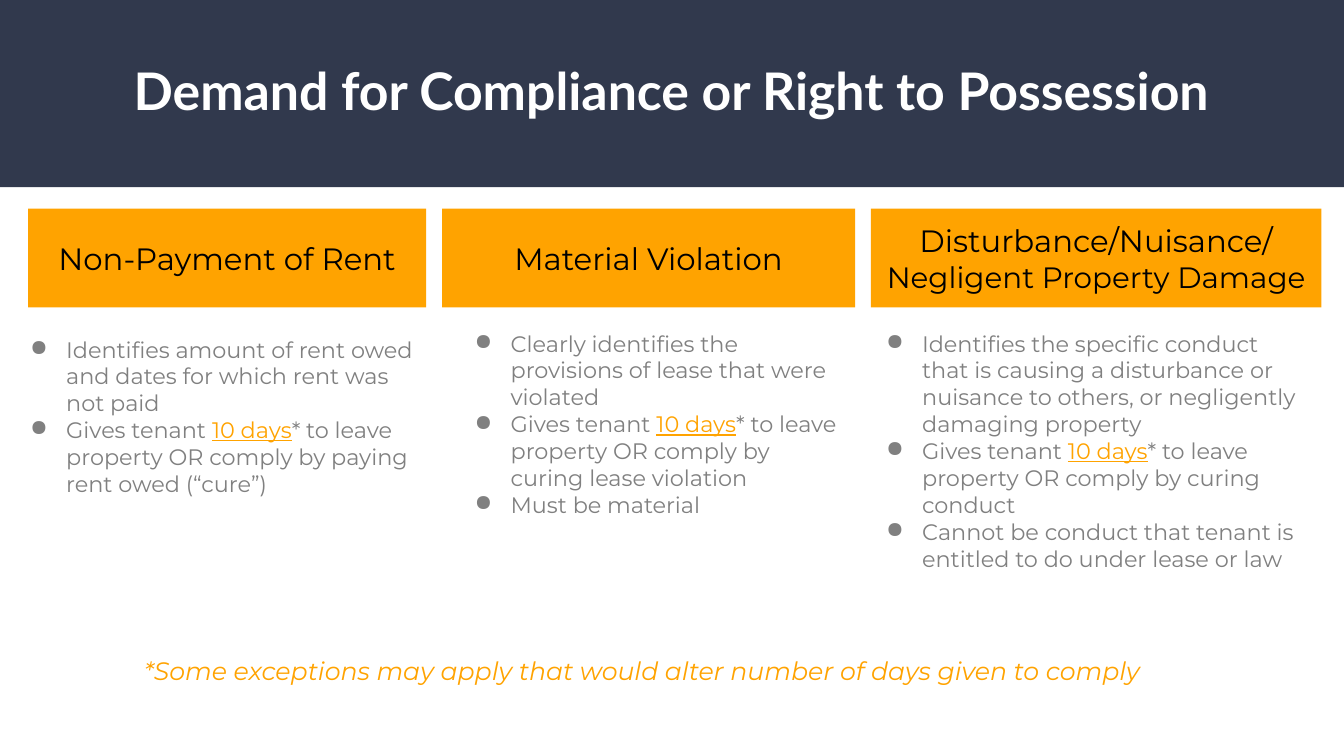
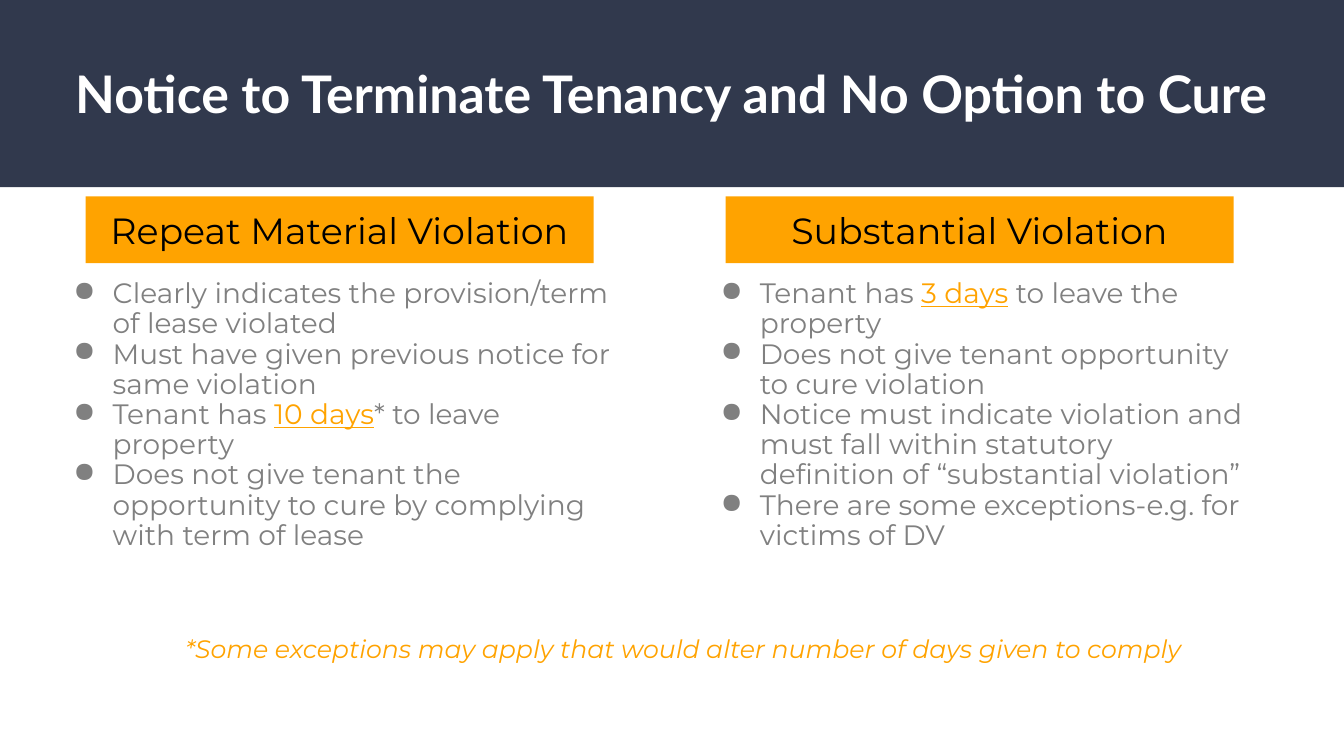
import collections

import lxml.etree
import pptx
import pptx.dml.color
import pptx.enum.shapes
import pptx.enum.text
import pptx.oxml.ns
import pptx.util

Cm = pptx.util.Cm
Align = pptx.enum.text.PP_ALIGN
Anchor = pptx.enum.text.MSO_ANCHOR
Box = collections.namedtuple("Box", "left top width height")
Column = collections.namedtuple("Column", "heading width shift drop body_width points")

NAVY, ORANGE, GREY, WHITE, BLACK = "31394D", "FFA300", "808080", "FFFFFF", "000000"
TITLE_FONT, TEXT_FONT = "Lato", "Montserrat"
PAGE_WIDTH, PAGE_HEIGHT, BAND_HEIGHT = 33.87, 19.05, 4.72
NOTE = "*Some exceptions may apply that would alter number of days given to comply"

DEMAND_COLUMNS = [
    Column([("Non-Payment of Rent", 22)], 10.03, -0.56, 3.07, 10.74, [
        "Identifies amount of rent owed and dates for which rent was not paid",
        "Gives tenant |10 days|* to leave property OR comply by paying rent owed (“cure”)",
    ]),
    Column([("Material Violation", 22)], 10.41, 0.21, 2.92, 10.03, [
        "Clearly identifies the provisions of lease that were violated",
        "Gives tenant |10 days|* to leave property OR comply by curing lease violation",
        "Must be material",
    ]),
    Column([("Disturbance/Nuisance/", 22), ("Negligent Property Damage", 21)],
           11.35, -0.23, 2.92, 11.35, [
        "Identifies the specific conduct that is causing a disturbance or nuisance "
        "to others, or negligently damaging property",
        "Gives tenant |10 days|* to leave property OR comply by curing conduct",
        "Cannot be conduct that tenant is entitled to do under lease or law",
    ]),
]

TERMINATE_COLUMNS = [
    Column([("Repeat Material Violation", 26)], 12.8, -0.84, 1.96, 14.48, [
        "Clearly indicates the provision/term of lease violated",
        "Must have given previous notice for same violation",
        "Tenant has |10 days|* to leave property",
        "Does not give tenant the opportunity to cure by complying with term of lease",
    ]),
    Column([("Substantial Violation", 26)], 12.8, -0.66, 1.96, 14.12, [
        "Tenant has |3 days| to leave the property",
        "Does not give tenant opportunity to cure violation",
        "Notice must indicate violation and must fall within statutory "
        "definition of “substantial violation”",
        "There are some exceptions-e.g. for victims of DV",
    ]),
]


def color(value):
    return pptx.dml.color.RGBColor.from_string(value)


def lengths(box):
    return [Cm(value) for value in box]


def set_frame(frame, anchor, vertical_inset):
    frame.word_wrap = True
    frame.auto_size = pptx.enum.text.MSO_AUTO_SIZE.NONE
    frame.vertical_anchor = anchor
    frame.margin_left = frame.margin_right = Cm(0.25)
    frame.margin_top = frame.margin_bottom = Cm(vertical_inset)


def add_bullet(para, indent):
    properties = para._p.get_or_add_pPr()
    properties.set("marL", str(Cm(1.27)))
    properties.set("indent", str(-Cm(indent)))
    qualified = pptx.oxml.ns.qn
    bullet_color = lxml.etree.SubElement(properties, qualified("a:buClr"))
    lxml.etree.SubElement(bullet_color, qualified("a:srgbClr"), val=GREY)
    lxml.etree.SubElement(properties, qualified("a:buChar"), char="●")


def write(frame, text, size, fill=GREY, font=TEXT_FONT, bold=False, italic=False,
          align=Align.LEFT, spacing=1.0, before=0, bullet_indent=None):
    first = frame.paragraphs[0]
    para = frame.add_paragraph() if first.runs else first
    para.alignment = align
    para.line_spacing = spacing
    para.space_before = pptx.util.Pt(before)
    if bullet_indent:
        add_bullet(para, bullet_indent)
    for position, part in enumerate(text.split("|")):
        marked = position % 2 == 1
        span = para.add_run()
        span.text = part
        span.font.name = font
        span.font.size = pptx.util.Pt(size)
        span.font.bold = bold
        span.font.italic = italic
        span.font.underline = marked
        span.font.color.rgb = color(ORANGE if marked else fill)


def add_panel(page, box, fill):
    panel = page.shapes.add_shape(
        pptx.enum.shapes.MSO_SHAPE.RECTANGLE, *lengths(box))
    panel.shadow.inherit = False
    panel.fill.solid()
    panel.fill.fore_color.rgb = color(fill)
    panel.line.fill.background()
    return panel


def add_text_box(page, box, vertical_inset):
    frame = page.shapes.add_textbox(*lengths(box)).text_frame
    set_frame(frame, Anchor.TOP, vertical_inset)
    return frame


def add_layout_band(page):
    band = add_panel(page, Box(0, 0, PAGE_WIDTH, BAND_HEIGHT), NAVY)
    page.slide_layout.shapes.element.insert(2, band.element)


def add_title(page, text, box):
    title = page.shapes.title
    title.left, title.top, title.width, title.height = lengths(box)
    set_frame(title.text_frame, Anchor.MIDDLE, 0.13)
    write(title.text_frame, text, size=37, fill=WHITE, font=TITLE_FONT, bold=True,
          align=Align.CENTER, spacing=0.9)


def add_column(page, box, column, body_format):
    heading = add_panel(page, box, ORANGE).text_frame
    set_frame(heading, Anchor.MIDDLE, 0.25)
    for text, size in column.heading:
        write(heading, text, size=size, fill=BLACK, align=Align.CENTER)
    body_box = Box(box.left + column.shift, box.top + column.drop,
                   column.body_width, 8.5)
    body = add_text_box(page, body_box, 0.13)
    for point in column.points:
        write(body, point, **body_format)


def add_columns(page, box, columns, gap, body_format):
    left = box.left
    for column in columns:
        add_column(page, Box(left, box.top, column.width, box.height),
                   column, body_format)
        left += column.width + gap


def add_note(page, box):
    write(add_text_box(page, box, 0.25), NOTE, size=18, fill=ORANGE, italic=True,
          spacing=0.9, before=5)


def build_demand(page):
    add_title(page, "Demand for Compliance or Right to Possession",
              Box(1.14, 0.58, 31.55, 3.58))
    add_columns(page, Box(0.71, 5.26, 32.6, 2.49), DEMAND_COLUMNS, 0.4,
                {"size": 16, "bullet_indent": 0.91})
    add_note(page, Box(3.38, 16.36, 27.1, 1.93))


def build_terminate(page):
    add_title(page, "Notice to Terminate Tenancy and No Option to Cure",
              Box(1.14, 0.69, 31.55, 3.48))
    add_columns(page, Box(2.16, 4.95, 28.93, 1.68), TERMINATE_COLUMNS, 3.33,
                {"size": 20, "bullet_indent": 0.99, "spacing": 0.9})
    add_note(page, Box(4.42, 15.8, 27.1, 1.93))


def main():
    deck = pptx.Presentation()
    deck.slide_width, deck.slide_height = Cm(PAGE_WIDTH), Cm(PAGE_HEIGHT)
    layout = deck.slide_layouts.get_by_name("Title Only")
    pages = [deck.slides.add_slide(layout) for _ in range(2)]
    add_layout_band(pages[0])
    build_demand(pages[0])
    build_terminate(pages[1])
    deck.save("out.pptx")


if __name__ == "__main__":
    main()
